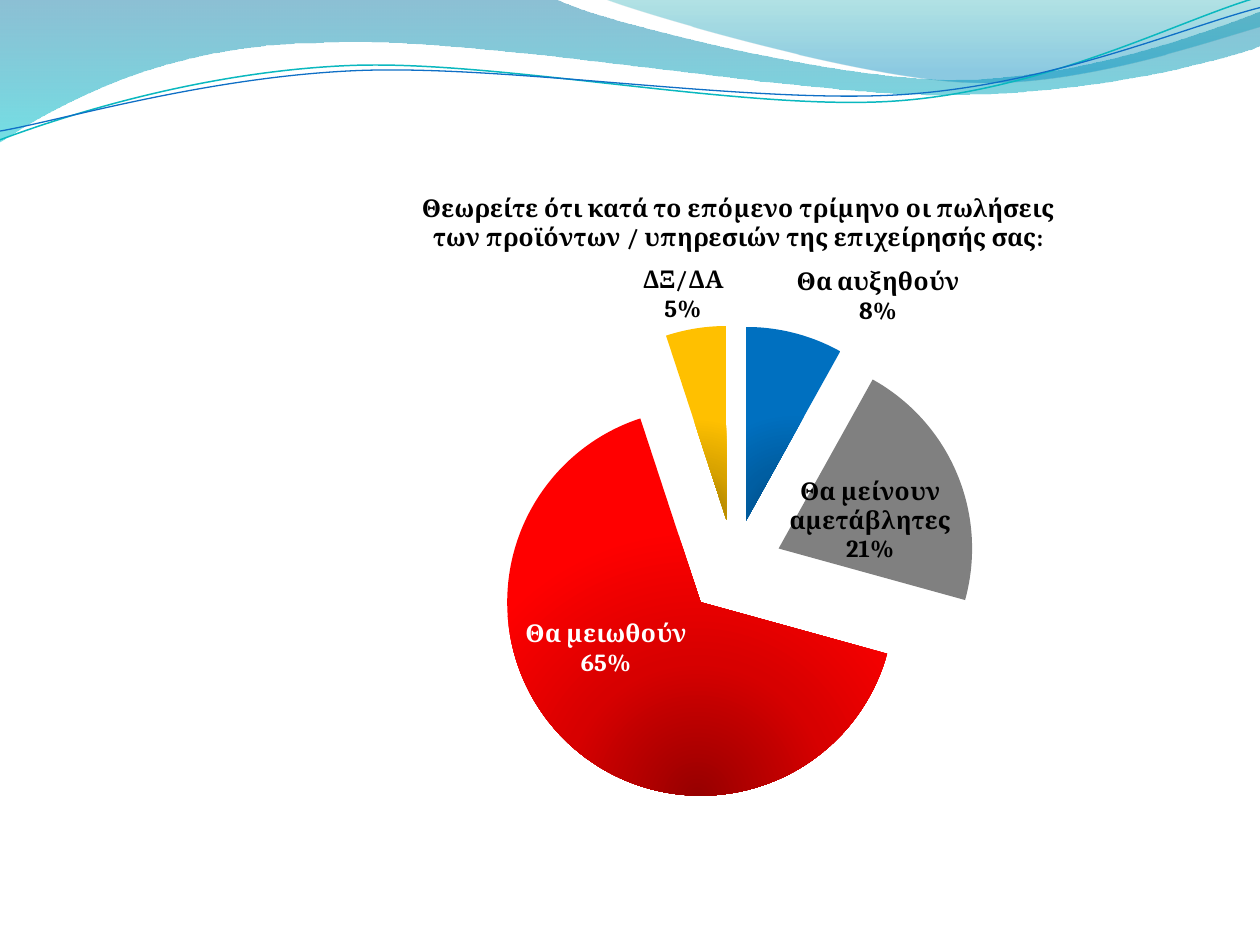
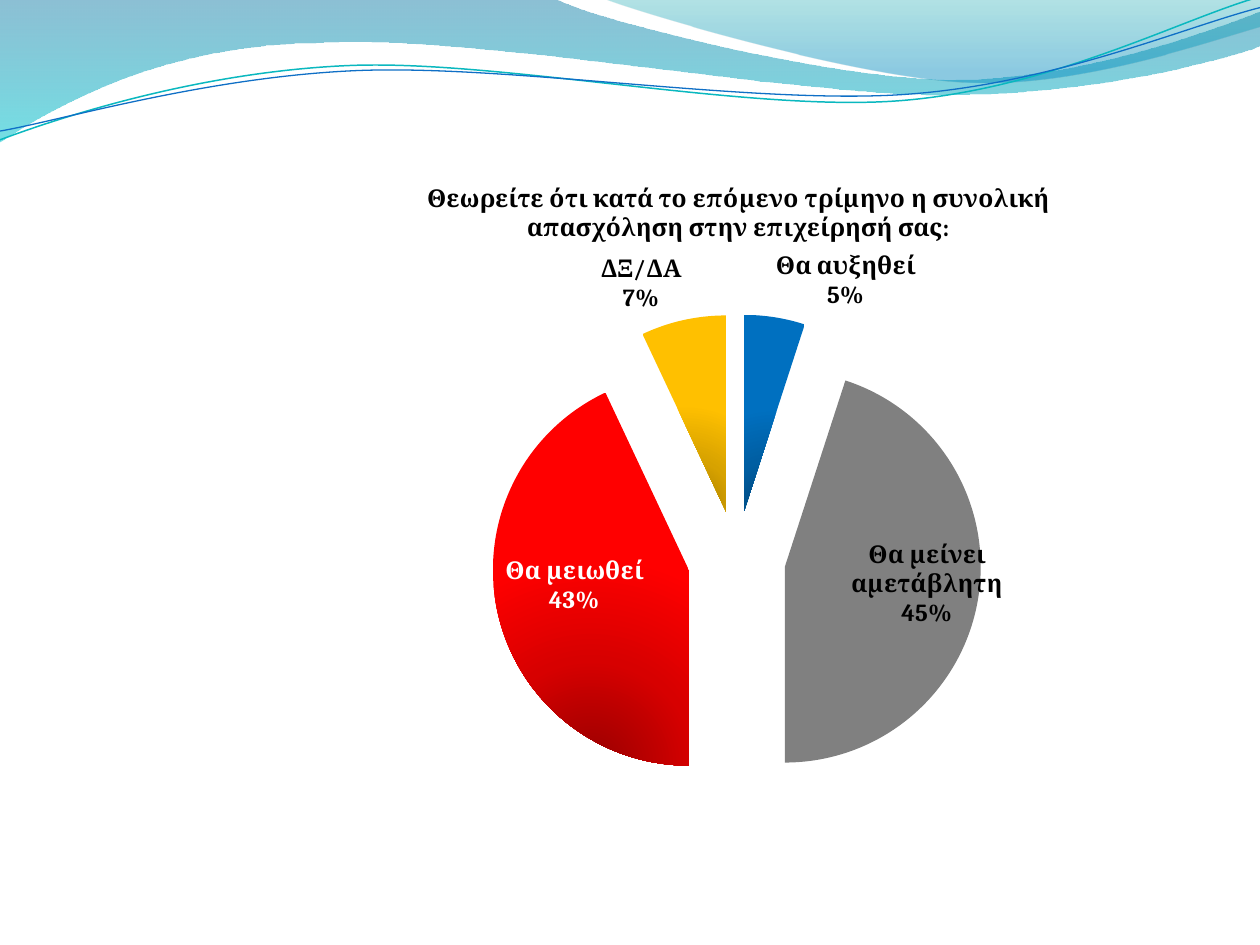
import math
from dataclasses import dataclass

import pptx
import pptx.chart.data
import pptx.dml.color
import pptx.enum.chart
import pptx.oxml
import pptx.oxml.ns
import pptx.util

PX = 9144
LINE_TILT = -2.7
NS = pptx.oxml.ns.nsdecls("a", "c")
qn = pptx.oxml.ns.qn
OUT_END = pptx.enum.chart.XL_LABEL_POSITION.OUTSIDE_END
CENTER = pptx.enum.chart.XL_LABEL_POSITION.CENTER


@dataclass(frozen=True)
class Theme:
    font: str = "Cambria"
    base_size: int = 10
    label_size: int = 14
    text: str = "000000"
    inverse: str = "FFFFFF"
    stable: str = "808080"
    up: tuple = ((0, "004272"), (50, "005EA2"), (100, "0070C0"))
    down: tuple = ((0, "970000"), (50, "D70000"), (100, "FF0000"))
    unknown: tuple = ((0, "977200"), (50, "D7A200"), (100, "FFC000"))
    wave: tuple = ((0, "0074A1", 45), (100, "00C6CF", 55))
    crest: tuple = ((0, "00A1A9", 30), (80, "008BBF", 45))
    teal_line: str = "0AB8BF"
    blue_line: str = "0F6FC6"


THEME = Theme()

WAVE = [(0, -1), (440, -1),
        (476, 17, 664, 63, 758, 63), (853, 63, 958, 26, 1000, 9), (1001, 36),
        (983, 44, 870, 76, 746, 75), (622, 75, 382, 28, 257, 34),
        (129, 35, 46, 83, -1, 113), (0, -1)]
CREST = [(479, -1), (509, 11, 682, 62, 769, 65), (856, 69, 961, 32, 1000, 21),
         (1000, 0), (479, -1)]
TEAL_LINE = [(0, 111), (48, 93, 158, 57, 277, 52),
             (395, 47, 593, 89, 713, 80), (833, 71, 938, 15, 998, -2)]
BLUE_LINE = [(0, 104), (47, 96, 164, 61, 283, 56),
             (403, 51, 597, 83, 717, 75), (836, 67, 941, 21, 1000, 6)]


def rgb(value):
    return pptx.dml.color.RGBColor.from_string(value)


def gradient(stops, direction):
    stop_xml = ""
    for pos, color, *alpha in stops:
        opacity = f'<a:alpha val="{alpha[0] * 1000}"/>' if alpha else ""
        stop_xml += f'<a:gs pos="{pos * 1000}"><a:srgbClr val="{color}">{opacity}</a:srgbClr></a:gs>'
    return pptx.oxml.parse_xml(
        f'<a:gradFill {NS} rotWithShape="1"><a:gsLst>{stop_xml}</a:gsLst>{direction}</a:gradFill>')


def set_gradient(fill, sp_pr, stops, direction):
    fill.solid()
    sp_pr.replace(sp_pr.find(qn("a:solidFill")), gradient(stops, direction))


def rotate(point, center, degrees):
    dx, dy = point[0] - center[0], point[1] - center[1]
    c, s = math.cos(math.radians(degrees)), math.sin(math.radians(degrees))
    return center[0] + dx * c - dy * s, center[1] + dx * s + dy * c


def add_curve(shapes, segments, close, tilt=0, center=(0, 0)):
    points = [rotate(seg[i:i + 2], center, -tilt)
              for seg in segments for i in range(0, len(seg), 2)]
    emu = [(x * PX, y * PX) for x, y in points]
    builder = shapes.build_freeform(*emu[0])
    builder.add_line_segments(emu[1:], close=close)
    sp = builder.convert_to_shape()
    lines = iter(list(sp._element.iter(qn("a:lnTo"))))
    for seg in segments[1:]:
        line = next(lines)
        if len(seg) == 6:
            bezier = pptx.oxml.parse_xml(f"<a:cubicBezTo {NS}/>")
            line.addprevious(bezier)
            for node in (line, next(lines), next(lines)):
                bezier.append(node[0])
                node.getparent().remove(node)
    sp.shadow.inherit = False
    sp.rotation = tilt
    return sp


def add_wave_band(slide):
    for segments, stops in ((WAVE, THEME.wave), (CREST, THEME.crest)):
        sp = add_curve(slide.shapes, segments, True)
        sp.line.fill.background()
        set_gradient(sp.fill, sp._element.spPr, stops, '<a:lin ang="5400000" scaled="1"/>')
    group = slide.shapes.add_group_shape()
    for segments, center, color, width in (
            (TEAL_LINE, (499, 57), THEME.teal_line, 0.85),
            (BLUE_LINE, (499, 59), THEME.blue_line, 0.75)):
        sp = add_curve(group.shapes, segments, False, LINE_TILT, center)
        sp.fill.background()
        sp.line.color.rgb = rgb(color)
        sp.line.width = pptx.util.Pt(width)


def manual_layout(**values):
    items = "".join(f'<c:{tag} val="{value}"/>' for tag, value in values.items())
    return pptx.oxml.parse_xml(
        f'<c:layout {NS}><c:manualLayout>{items}</c:manualLayout></c:layout>')


def style_font(font, color=THEME.text):
    font.name = THEME.font
    font.size = pptx.util.Pt(THEME.label_size)
    font.bold = True
    font.color.rgb = rgb(color)


def add_chart_title(chart, text):
    r = chart.chart_title.text_frame.paragraphs[0].add_run()
    r.text = text
    style_font(r.font)
    chart.chart_title.include_in_layout = False


def style_slices(series):
    for i, color in enumerate((THEME.up, THEME.stable, THEME.down, THEME.unknown)):
        fmt = series.points[i].format
        fmt.line.fill.background()
        if isinstance(color, str):
            fmt.fill.solid()
            fmt.fill.fore_color.rgb = rgb(color)
        else:
            sp_pr = series._element.findall(qn("c:dPt"))[-1].find(qn("c:spPr"))
            set_gradient(fmt.fill, sp_pr, color,
                         '<a:path path="circle"><a:fillToRect l="50000" t="100000" r="50000"/></a:path>')
    first = series._element.find(qn("c:dPt"))
    first.addprevious(pptx.oxml.parse_xml(f'<c:explosion {NS} val="25"/>'))


def label_slices(series, box, shifts):
    labels = series.data_labels
    labels.number_format = "0%"
    labels.number_format_is_linked = False
    labels.show_value = False
    labels.show_category_name = labels.show_percentage = True
    style_font(labels.font)
    placing = zip((OUT_END, CENTER, CENTER, OUT_END),
                  (THEME.text, THEME.text, THEME.inverse, THEME.text))
    for i, (position, color) in enumerate(placing):
        label = series.points[i].data_label
        style_font(label.font, color)
        label.position = position
    total = sum(series.values)
    for el, (dx, dy), value in zip(series._element.iter(qn("c:dLbl")), shifts, series.values):
        as_share = round(100 * value / total) == value
        code = "0%" if as_share else "0&quot;%&quot;"
        for tag, on in (("showVal", not as_share), ("showCatName", True),
                        ("showPercent", as_share)):
            el.find(qn(f"c:{tag}")).set("val", str(int(on)))
        el.insert(1, pptx.oxml.parse_xml(f'<c:numFmt {NS} formatCode="{code}" sourceLinked="0"/>'))
        if dx or dy:
            el.insert(1, manual_layout(x=round(dx / box[2], 4), y=round(dy / box[3], 4)))
        el.append(pptx.oxml.parse_xml(f'<c:separator {NS}>\n</c:separator>'))


def add_answer_pie(slide, box, title, answers, plot, shifts):
    data = pptx.chart.data.CategoryChartData()
    data.categories = [name for name, _ in answers]
    data.add_series("Series 1", [value for _, value in answers])
    frame = slide.shapes.add_chart(pptx.enum.chart.XL_CHART_TYPE.PIE,
                                   *(v * PX for v in box), data)
    chart = frame.chart
    chart.has_legend = False
    chart.font.name = THEME.font
    chart.font.size = pptx.util.Pt(THEME.base_size)
    chart.font.color.rgb = rgb(THEME.text)
    add_chart_title(chart, title)
    chart.plots[0].vary_by_categories = True
    series = chart.plots[0].series[0]
    style_slices(series)
    label_slices(series, box, shifts)
    area = chart._chartSpace.chart.plotArea
    for old in area.findall(qn("c:layout")):
        area.remove(old)
    x, y, w, h = plot
    area.insert(0, manual_layout(layoutTarget="inner", xMode="edge", yMode="edge",
                                 x=x, y=y, w=w, h=h))


QUESTIONS = [
    dict(box=(250, 133, 672, 531),
         title="Θεωρείτε ότι κατά το επόμενο τρίμηνο οι πωλήσεις των προϊόντων / "
               "υπηρεσιών της επιχείρησής σας:",
         answers=[("Θα αυξηθούν", 8), ("Θα μείνουν αμετάβλητες", 21),
                  ("Θα μειωθούν", 65), ("ΔΞ/ΔΑ", 5)],
         plot=(0.071, 0.236, 0.848, 0.723),
         shifts=[(0, 0), (2, 8), (-22, -18), (23, 2)]),
    dict(box=(250, 125, 672, 539),
         title="Θεωρείτε ότι κατά το επόμενο τρίμηνο η συνολική απασχόληση "
               "στην επιχείρησή σας:",
         answers=[("Θα αυξηθεί", 5), ("Θα μείνει αμετάβλητη", 45),
                  ("Θα μειωθεί", 43), ("ΔΞ/ΔΑ", 7)],
         plot=(0.083, 0.231, 0.83, 0.721),
         shifts=[(0, 0), (36, 2), (-15, -4), (0, 0)]),
]


def main():
    prs = pptx.Presentation()
    prs.slide_width, prs.slide_height = 1000 * PX, 750 * PX
    for question in QUESTIONS:
        slide = prs.slides.add_slide(prs.slide_layouts[6])
        add_wave_band(slide)
        add_answer_pie(slide, **question)
    prs.save("out.pptx")


if __name__ == "__main__":
    main()
